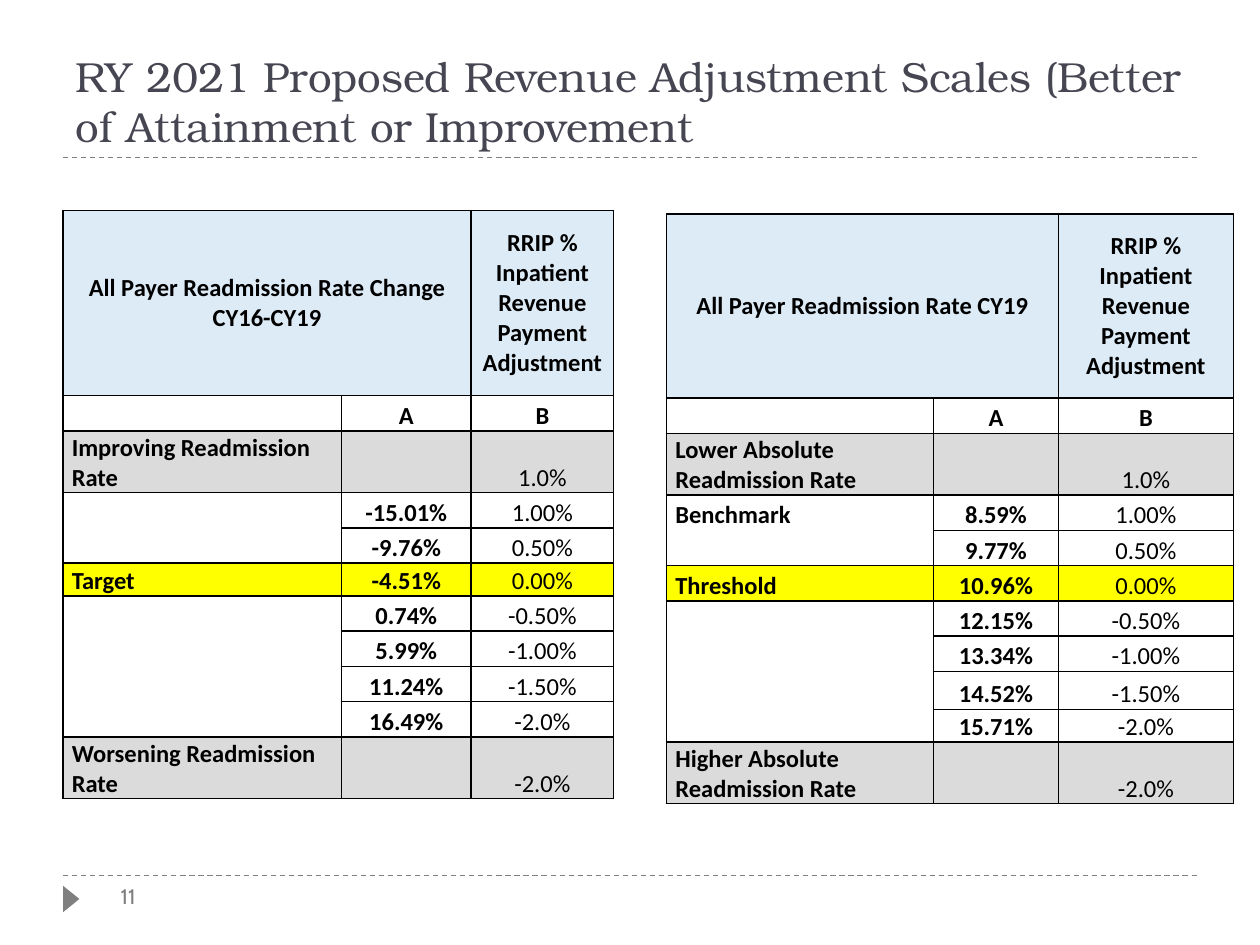
from dataclasses import dataclass

from lxml import etree
from pptx import Presentation
from pptx.dml.color import RGBColor
from pptx.enum.dml import MSO_LINE
from pptx.enum.shapes import MSO_CONNECTOR, MSO_SHAPE
from pptx.enum.text import MSO_ANCHOR, PP_ALIGN
from pptx.oxml.ns import qn
from pptx.slide import Slide
from pptx.util import Inches, Pt

LEFT, CENTER = PP_ALIGN.LEFT, PP_ALIGN.CENTER
MIDDLE, BOTTOM = MSO_ANCHOR.MIDDLE, MSO_ANCHOR.BOTTOM
DASH = MSO_LINE.DASH
STRAIGHT = MSO_CONNECTOR.STRAIGHT
TRIANGLE = MSO_SHAPE.ISOSCELES_TRIANGLE

BLACK = RGBColor(0x00, 0x00, 0x00)
WHITE = RGBColor(0xFF, 0xFF, 0xFF)
GRAY = RGBColor(0x7F, 0x7F, 0x7F)
SLATE = RGBColor(0x46, 0x46, 0x53)
PALE_BLUE = RGBColor(0xDD, 0xEB, 0xF7)
LIGHT_GRAY = RGBColor(0xDB, 0xDB, 0xDB)
YELLOW = RGBColor(0xFF, 0xFF, 0x00)

HEADER_ROW, LETTER_ROW, TARGET_ROW = 0, 1, 5
EXTREME_ROWS = (2, 10)
OPEN_BELOW = (3, 6, 7, 8)
ADJUSTMENTS = ["1.0%", "1.00%", "0.50%", "0.00%", "-0.50%",
               "-1.00%", "-1.50%", "-2.0%", "-2.0%"]


def write_text(frame, text, font, size, color, bold=False, align=LEFT, anchor=None):
    frame.word_wrap = True
    if anchor is not None:
        frame.vertical_anchor = anchor
    paragraph = frame.paragraphs[0]
    paragraph.alignment = align
    if not text:
        end = etree.SubElement(paragraph._p, qn("a:endParaRPr"))
        end.set("sz", str(int(size * 100)))
        return
    run = paragraph.add_run()
    run.text = text
    run.font.name = font
    run.font.size = Pt(size)
    run.font.bold = bold
    run.font.color.rgb = color


def set_borders(cell, open_sides):
    properties = cell._tc.get_or_add_tcPr()
    for side in ("L", "R", "T", "B"):
        line = etree.SubElement(properties, qn(f"a:ln{side}"))
        if side in open_sides:
            etree.SubElement(line, qn("a:noFill"))
        else:
            line.set("w", str(Pt(1)))
            fill = etree.SubElement(line, qn("a:solidFill"))
            etree.SubElement(fill, qn("a:srgbClr")).set("val", str(BLACK))


def row_fill(row, column):
    if row == HEADER_ROW:
        return PALE_BLUE
    if row in EXTREME_ROWS:
        return LIGHT_GRAY
    if row == TARGET_ROW:
        return YELLOW
    return None if row == LETTER_ROW or column == 0 else WHITE


@dataclass
class ScaleSlide:
    slide: Slide
    heading_font: str = "TeX Gyre Bonum"
    table_font: str = "Calibri"
    number_font: str = "Cabin"

    def title(self, text):
        heading = self.slide.shapes.title
        heading.left, heading.top = Inches(0.5), Inches(0.25)
        heading.width, heading.height = Inches(9), Inches(1)
        write_text(heading.text_frame, text, font=self.heading_font, size=24,
                   color=SLATE, anchor=BOTTOM)

    def rule(self, y):
        rule = self.slide.shapes.add_connector(
            STRAIGHT, Inches(0.5), Inches(y), Inches(9.5), Inches(y))
        rule.line.color.rgb = GRAY
        rule.line.width = Pt(0.75)
        rule.line.dash_style = DASH
        etree.SubElement(rule._element.spPr, qn("a:effectLst"))

    def marker(self, left, top, width, height):
        marker = self.slide.shapes.add_shape(
            TRIANGLE, Inches(left), Inches(top), Inches(width), Inches(height))
        marker.rotation = 90
        marker.shadow.inherit = False
        marker.fill.solid()
        marker.fill.fore_color.rgb = GRAY
        marker.line.fill.background()

    def page_number(self, text, left, top, width, height):
        number = self.slide.shapes.add_textbox(
            Inches(left), Inches(top), Inches(width), Inches(height))
        write_text(number.text_frame, text, font=self.number_font, size=12, color=GRAY)

    def cell(self, cell, text, row, column):
        header = row == HEADER_ROW
        cell.margin_left = cell.margin_right = Inches(0.07)
        cell.margin_top = cell.margin_bottom = 0
        cell.vertical_anchor = MIDDLE if header else BOTTOM
        write_text(cell.text_frame, text, font=self.table_font, size=14, color=BLACK,
                   bold=column < 2 or row <= LETTER_ROW,
                   align=CENTER if header or column else LEFT)
        open_sides = ""
        if column == 0:
            open_sides += "B" if row in OPEN_BELOW else ""
            open_sides += "T" if row - 1 in OPEN_BELOW else ""
        set_borders(cell, open_sides)
        color = row_fill(row, column)
        if color is None:
            cell.fill.background()
        else:
            cell.fill.solid()
            cell.fill.fore_color.rgb = color

    def scale_table(self, left, top, widths, heights, header, labels, rates):
        rows = [(header, "", "RRIP % Inpatient Revenue Payment Adjustment"),
                ("", "A", "B")]
        rows += zip(labels, ["", *rates, ""], ADJUSTMENTS)
        table = self.slide.shapes.add_table(
            len(rows), len(widths), Inches(left), Inches(top),
            Inches(sum(widths)), Inches(sum(heights))).table
        table.first_row = table.horz_banding = False
        for column, width in zip(table.columns, widths):
            column.width = Inches(width)
        for row, height in zip(table.rows, heights):
            row.height = Inches(height)
        for r, texts in enumerate(rows):
            for c, text in enumerate(texts):
                self.cell(table.cell(r, c), text, r, c)
        table.cell(0, 0).merge(table.cell(0, 1))


def main():
    deck = Presentation()
    deck.slide_width, deck.slide_height = Inches(10), Inches(7.5)
    page = ScaleSlide(deck.slides.add_slide(deck.slide_layouts[5]))
    for y in (6.95, 1.25):
        page.rule(y)
    page.marker(0.46, 7.07, 0.21, 0.13)
    page.page_number("11", 0.86, 6.96, 0.41, 0.3)
    page.title("RY 2021 Proposed Revenue Adjustment Scales "
               "(Better of Attainment or Improvement")
    page.scale_table(
        0.5, 1.67, [2.21, 1.03, 1.13],
        [1.47, 0.28, 0.49, 0.28, 0.28, 0.26, 0.28, 0.28, 0.28, 0.28, 0.49],
        "All Payer Readmission Rate Change CY16-CY19",
        ["Improving Readmission Rate", "", "", "Target", "", "", "", "",
         "Worsening Readmission Rate"],
        ["-15.01%", "-9.76%", "-4.51%", "0.74%", "5.99%", "11.24%", "16.49%"])
    page.scale_table(
        5.29, 1.7, [2.12, 0.99, 1.39],
        [1.46, 0.28, 0.49, 0.28, 0.28, 0.28, 0.28, 0.28, 0.3, 0.26, 0.49],
        "All Payer Readmission Rate CY19",
        ["Lower Absolute Readmission Rate", "Benchmark", "", "Threshold", "", "", "", "",
         "Higher Absolute Readmission Rate"],
        ["8.59%", "9.77%", "10.96%", "12.15%", "13.34%", "14.52%", "15.71%"])
    deck.save("out.pptx")


if __name__ == "__main__":
    main()
